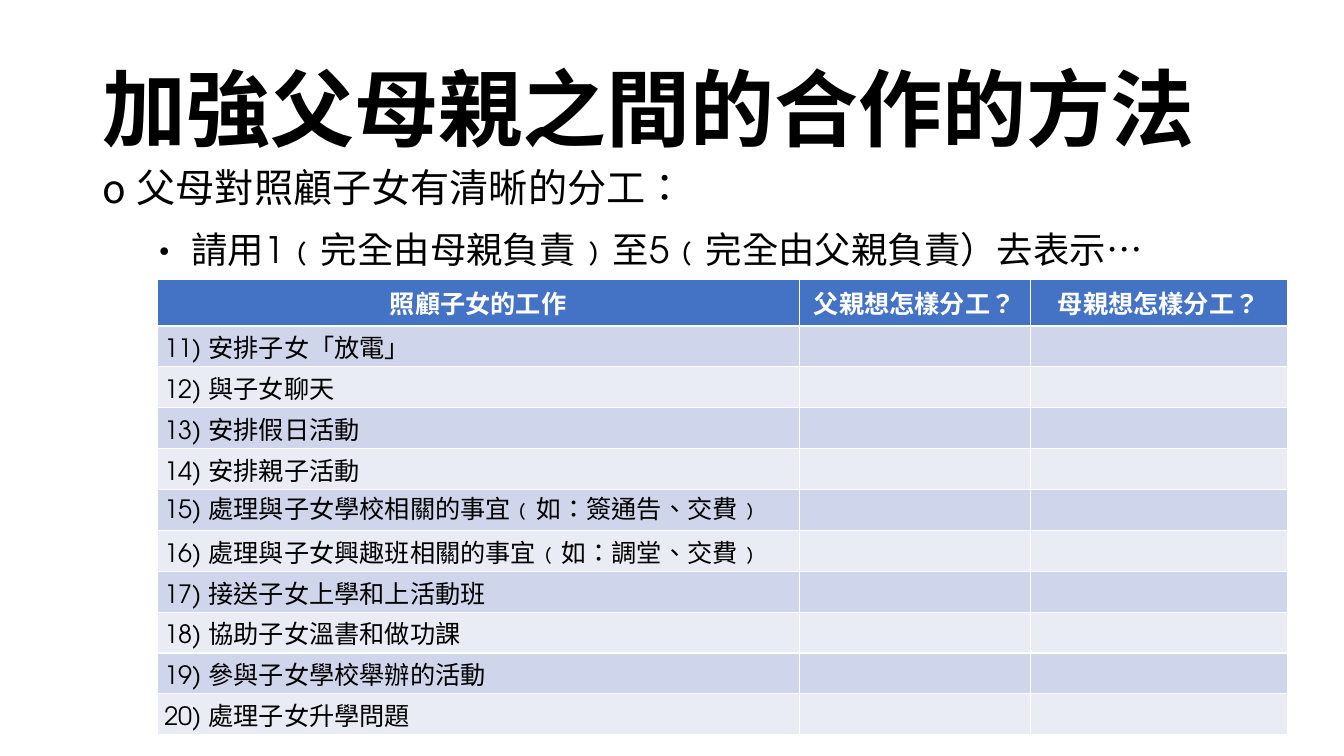
"""Build the slide on how parents share the care of their children."""
from collections import namedtuple

from lxml import etree
from pptx import Presentation
from pptx import util as u
from pptx.dml.color import RGBColor
from pptx.enum import text as t
from pptx.oxml.ns import qn

Theme = namedtuple("Theme", "ink white head odd even title body note cell sans round")
look = Theme("000000", "FFFFFF", "4472C4", "CFD5EA", "E9EBF5",
             60, 28, 26, 18, "Noto Sans CJK SC", "TeX Gyre Adventor")


def write(frame, words, size, face=look.round, color=look.ink, bold=False,
          align=t.PP_ALIGN.LEFT, line=None, before=0, mark=None):
    """Put one formatted paragraph in a text frame, with an optional bullet."""
    para = frame.paragraphs[0]
    para.alignment = align
    para.line_spacing = line
    para.space_before = u.Pt(before)
    run = para.add_run()
    run.text = words
    font = run.font
    font.size, font.bold, font.name = u.Pt(size), bold, face
    font.color.rgb = RGBColor.from_string(color)
    props = run._r.get_or_add_rPr()
    props.set("lang", "zh-HK")
    etree.SubElement(props, qn("a:ea")).set("typeface", look.sans)
    if mark:
        props = para._p.get_or_add_pPr()
        props.set("marL", str(u.Cm(0.64)))
        props.set("indent", str(-u.Cm(0.64)))
        etree.SubElement(props, qn("a:buFont")).set("typeface", look.sans)
        etree.SubElement(props, qn("a:buChar")).set("char", mark)


deck = Presentation()
deck.slide_width, deck.slide_height = u.Cm(33.87), u.Cm(19.05)
slide = deck.slides.add_slide(deck.slide_layouts[1])

title, body = slide.placeholders
note = slide.shapes.add_textbox(0, 0, 0, 0)
spots = [(title, 2.33, 1.01, 29.21, 3.68),
         (body, 2.33, 4.11, 29.21, 1.57),
         (note, 3.45, 5.72, 29.01, 1.32)]
for box, *spot in spots:
    box.left, box.top, box.width, box.height = map(u.Cm, spot)
    box.text_frame.word_wrap = True
    box.text_frame.auto_size = t.MSO_AUTO_SIZE.NONE
title.text_frame.vertical_anchor = t.MSO_ANCHOR.MIDDLE

write(title.text_frame, "加強父母親之間的合作的方法", look.title, look.sans,
      bold=True, line=0.9)
write(body.text_frame, " 父母對照顧子女有清晰的分工：", look.body, look.sans,
      line=0.9, before=10, mark="o")
write(note.text_frame, " 請用1﹙完全由母親負責﹚至5﹙完全由父親負責）去表示…", look.note,
      line=0.9, before=10, mark="•")

heads = ["照顧子女的工作", "父親想怎樣分工？", "母親想怎樣分工？"]
tasks = ["安排子女「放電」", "與子女聊天", "安排假日活動", "安排親子活動",
         "處理與子女學校相關的事宜﹙如：簽通告、交費﹚",
         "處理與子女興趣班相關的事宜﹙如：調堂、交費﹚",
         "接送子女上學和上活動班", "協助子女溫書和做功課",
         "參與子女學校舉辦的活動", "處理子女升學問題"]
wides = [16.18, 5.82, 6.48]
highs = [1.16, 0.99, 1.03, 0.99, 0.99] + [1.03] * 6

grid = slide.shapes.add_table(len(highs), len(wides), u.Cm(3.96), u.Cm(7.04),
                              u.Cm(sum(wides)), u.Cm(sum(highs))).table
for col, wide in zip(grid.columns, wides):
    col.width = u.Cm(wide)
for i, (row, high) in enumerate(zip(grid.rows, highs)):
    row.height = u.Cm(high)
    for cell in row.cells:
        fill = look.head if i == 0 else look.odd if i % 2 else look.even
        cell.fill.solid()
        cell.fill.fore_color.rgb = RGBColor.from_string(fill)

for cell, head in zip(grid.rows[0].cells, heads):
    write(cell.text_frame, head, look.cell, color=look.white, bold=True,
          align=t.PP_ALIGN.CENTER)
for i, task in enumerate(tasks, 1):
    cell = grid.cell(i, 0)
    cell.margin_left = cell.margin_right = u.Cm(0.18)
    cell.margin_top = cell.margin_bottom = 0
    write(cell.text_frame, f"{i + 10}) {task}", look.cell,
          line=1.0 if i == 5 else 1.07)

deck.save("out.pptx")
